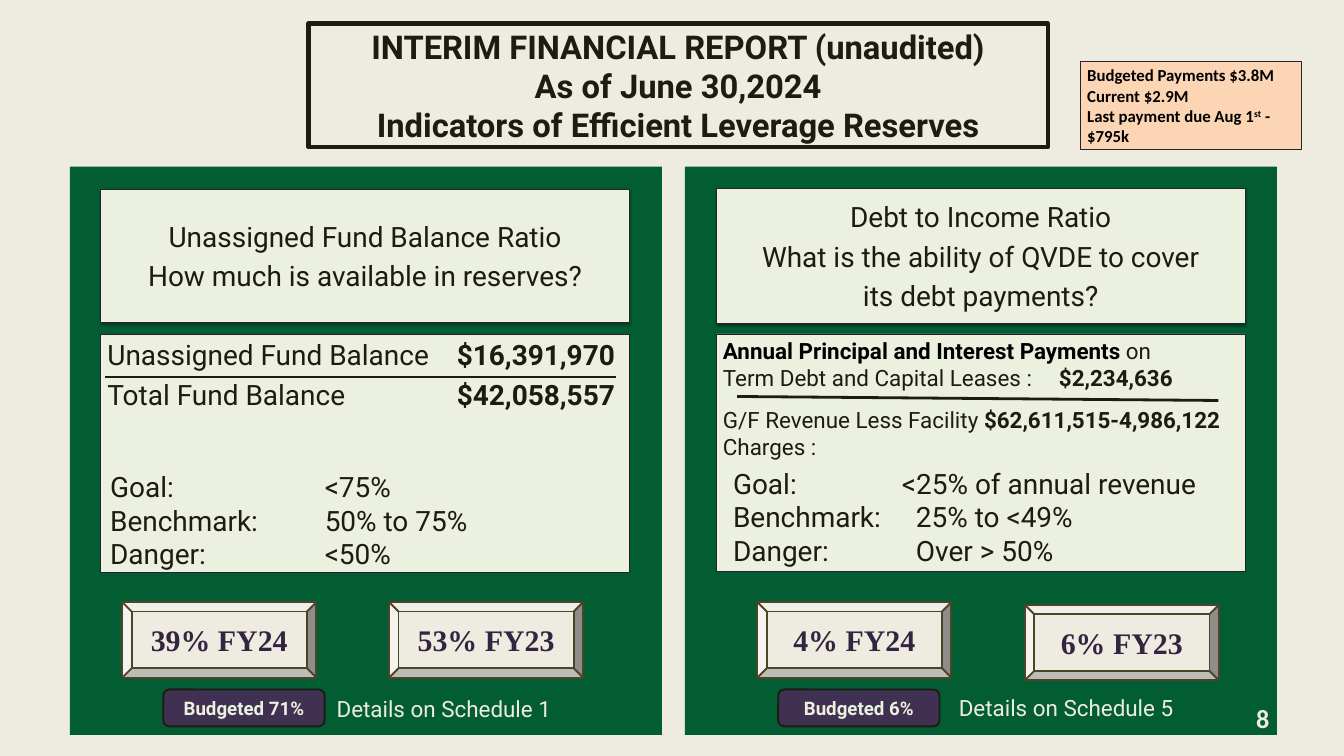
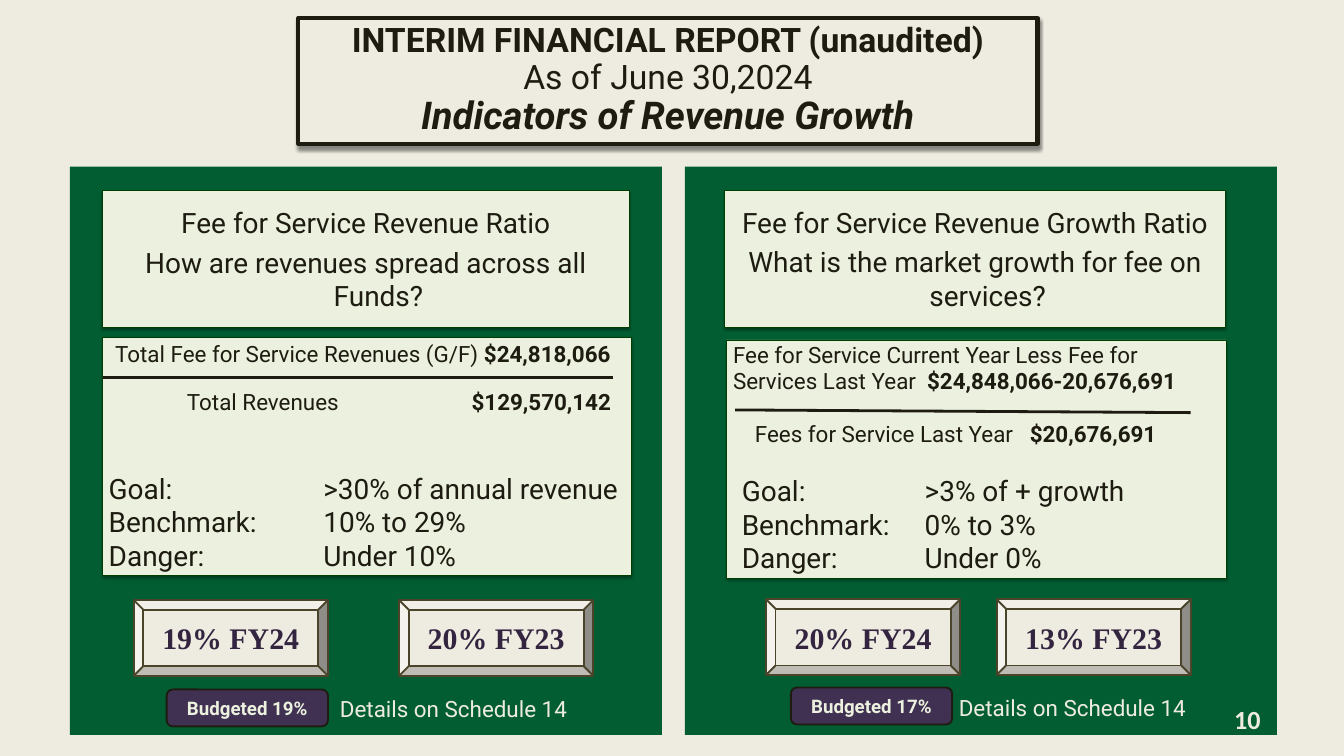
import dataclasses
import pptx
import pptx.util
import pptx.dml.color
import pptx.enum.shapes
import pptx.enum.text
import pptx.oxml.ns
from lxml import etree

Pt = pptx.util.Pt
Kind = pptx.enum.shapes.MSO_SHAPE
Align = pptx.enum.text.PP_ALIGN
Anchor = pptx.enum.text.MSO_ANCHOR


@dataclasses.dataclass(frozen=True)
class Theme:
    paper: str = "EEECE1"
    green: str = "025E32"
    mint: str = "EBF1DE"
    peach: str = "FCD5B5"
    plum: str = "403152"
    ink: str = "1E1C11"
    black: str = "000000"
    grape: str = "332440"
    edge: str = "291F35"
    moss: str = "003E00"
    brown: str = "4A452A"
    sans: str = "Roboto"
    serif: str = "Times New Roman"
    plain: str = "Calibri"
    ask: float = 30
    calc: float = 24
    card: float = 32
    tag: float = 20
    page: float = 28
    note: float = 18


T = Theme()


def bold(text, **more):
    return text, dict(bold=True, **more)


def row(*runs, tabs=(), before=0):
    return runs, tabs, before


def goals(tabs, *pairs):
    """Rows of label and value; tabs holds one stop for each row."""
    names = ("Goal:", "Benchmark:", "Danger:")
    return [row(f"{name}\t{pair}", tabs=(tab,))
            for name, pair, tab in zip(names, pairs, tabs)]


SLIDES = [
    dict(
        title=dict(
            at=(330.5, 25.2, 792, 132.5), space=1, fill=None, shade=None,
            rows=[row(bold(text, size=35.1)) for text in (
                "INTERIM FINANCIAL REPORT (unaudited)",
                "As of June 30,2024",
                "Indicators of Efficient Leverage Reserves")]),
        edge=T.edge, shade=None, page=("8", (1329.8, 752.4, 30.2, 33.8)),
        note=dict(
            at=(1157.8, 66.2, 236.9, 94.3),
            rows=[row(bold("Budgeted Payments $3.8M")),
                  row(bold("Current $2.9M")),
                  row(bold("Last payment due Aug 1"), bold("st", base=30000),
                      bold(" - $795k"))]),
        panels=[
            dict(ask=(108, 203, 566.6, 142.6),
                 lines=["Unassigned Fund Balance Ratio",
                        "How much is available in reserves?"],
                 box=(108, 358.6, 566.6, 254.9), size=30,
                 calc=[row("Unassigned Fund Balance\t", bold("$16,391,970"),
                           tabs=(-544,)),
                       row("Total Fund Balance\t", bold("$42,058,557"),
                           tabs=(-544,), before=6)],
                 rule=(113, 403.9, 659.5, 403.9),
                 goal=(110.9, 499.7, 566.6, 116.6),
                 goals=goals((230,) * 3, "<75%", "50% to 75%", "<50%"),
                 cards=[("39% FY24", 131, 645.1), ("53% FY23", 416.9, 645.1)],
                 tag=("Budgeted 71%", 175, 738.7),
                 more=("Details on Schedule 1", 353.5, 741.6)),
            dict(ask=(767.5, 202.3, 566.6, 144),
                 lines=["Debt to Income Ratio",
                        "What is the ability of QVDE to cover",
                        "its debt payments?"],
                 box=(767.5, 357.8, 566.6, 254.9), size=24,
                 calc=[row(bold("Annual Principal and Interest Payments ",
                                ink=T.black), "on"),
                       row("Term Debt and Capital Leases :\t",
                           bold("$2,234,636"), tabs=(360,)),
                       row("G/F Revenue Less Facility ",
                           bold("$62,611,515-4,986,122"), before=16.4),
                       row("Charges :")],
                 rule=(789.8, 424.8, 1305.4, 429.1),
                 goal=(778.3, 496.1, 540, 116.6),
                 goals=goals((181, 196, 196), "<25% of annual revenue",
                             "25% to <49%", "Over > 50%"),
                 cards=[("4% FY24", 811.4, 645.1), ("6% FY23", 1098, 648)],
                 tag=("Budgeted 6%", 833.8, 738.7),
                 more=("Details on Schedule 5", 1020.2, 740.2)),
        ]),
    dict(
        title=dict(
            at=(319.7, 19.4, 792, 134.6), space=0.9, fill=T.paper,
            shade=(43, 4, 4),
            rows=[row(bold("INTERIM FINANCIAL REPORT (unaudited)", size=36.1)),
                  row(("As of June 30,2024", dict(size=36.1))),
                  row(bold("Indicators of Revenue Growth", size=41,
                           italic=True))]),
        edge=T.moss, shade=(35, 3.1, 1.8),
        page=("10", (1320.5, 753.1, 30.2, 33.8)), note=None,
        panels=[
            dict(ask=(109.4, 204.5, 565.2, 146.2),
                 lines=["Fee for Service Revenue Ratio",
                        "How are revenues spread across all Funds?"],
                 box=(110.2, 361.4, 565.9, 254.9), size=24,
                 calc=[row("\tTotal Fee for Service Revenues (G/F) ",
                           bold("$24,818,066"), tabs=(6,)),
                       row("\tTotal Revenues\t", bold("$129,570,142"),
                           tabs=(83, 388), before=22)],
                 rule=(110.2, 404.6, 656.6, 404.6),
                 goal=(109.4, 501.1, 565.2, 116.6),
                 goals=goals((230,) * 3, ">30% of annual revenue",
                             "10% to 29%", "Under 10%"),
                 cards=[("19% FY24", 143.3, 643), ("20% FY23", 427.7, 643)],
                 tag=("Budgeted 19%", 178.6, 738.7),
                 more=("Details on Schedule 14", 357.1, 741.6)),
            dict(ask=(776.2, 203.8, 537.1, 146.9),
                 lines=["Fee for Service Revenue Growth Ratio",
                        "What is the market growth for fee on services?"],
                 box=(778.3, 364.3, 535.7, 254.9), size=24,
                 over=(778.3, 361.4, 535.7, 123.8),
                 calc=[row("Fee for Service Current Year Less Fee for "
                           "Services Last Year\t",
                           bold("$24,848,066-20,676,691"), tabs=(208,)),
                       row("\tFees for Service Last Year\t",
                           bold("$20,676,691"), tabs=(23.5, 318), before=28)],
                 rule=(787.7, 439.2, 1275.8, 442.1),
                 goal=(787.7, 504, 508.3, 116.6),
                 goals=goals((196,) * 3, ">3% of + growth", "0% to 3%",
                             "Under 0%"),
                 cards=[("20% FY24", 820.8, 642.2),
                        ("13% FY23", 1067.8, 642.2)],
                 tag=("Budgeted 17%", 847.4, 736.6),
                 more=("Details on Schedule 14", 1020.2, 740.2)),
        ]),
]


def rgb(code):
    return pptx.dml.color.RGBColor.from_string(code)


def node(parent, tag, **attrs):
    child = etree.SubElement(parent, pptx.oxml.ns.qn(tag))
    for key, value in attrs.items():
        child.set(key, str(value))
    return child


def cast(shape, shade):
    """Add a downward shadow: opacity in percent, blur and distance."""
    alpha, blur, dist = shade
    shape.shadow.inherit = False
    props = shape._element.spPr.find(pptx.oxml.ns.qn("a:effectLst"))
    outer = node(props, "a:outerShdw", blurRad=int(Pt(blur)),
                 dist=int(Pt(dist)), dir=90 * 60000, rotWithShape=0)
    node(node(outer, "a:srgbClr", val=T.black), "a:alpha", val=alpha * 1000)


def paint(shape, fill, edge=None, width=0.75, shade=None):
    if fill:
        shape.fill.solid()
        shape.fill.fore_color.rgb = rgb(fill)
    else:
        shape.fill.background()
    if edge:
        shape.line.color.rgb = rgb(edge)
        shape.line.width = Pt(width)
    else:
        shape.line.fill.background()
    if shade:
        cast(shape, shade)
    else:
        shape.shadow.inherit = False


def place(shape, at):
    shape.left, shape.top, shape.width, shape.height = map(Pt, at)


def write(shape, rows, size, ink=T.ink, font=T.sans, align=Align.LEFT,
          anchor=Anchor.TOP, inset=None, space=None, hang=0):
    frame = shape.text_frame
    frame.word_wrap = True
    frame.auto_size = pptx.enum.text.MSO_AUTO_SIZE.NONE
    frame.vertical_anchor = anchor
    if inset is not None:
        frame.margin_left = frame.margin_right = Pt(inset)
        frame.margin_top = frame.margin_bottom = Pt(inset)
    for i, (runs, tabs, before) in enumerate(rows):
        para = frame.add_paragraph() if i else frame.paragraphs[0]
        para.alignment = align
        if space:
            para.line_spacing = space
        para.space_before = Pt(before)
        props = para._p.get_or_add_pPr()
        if hang:
            props.set("marL", str(int(Pt(hang))))
            props.set("indent", str(-int(Pt(hang))))
        if tabs:
            stops = node(props, "a:tabLst")
            for tab in tabs:  # a negative stop is right-aligned
                node(stops, "a:tab", pos=int(Pt(abs(tab))),
                     algn="r" if tab < 0 else "l")
        for part in runs:
            text, look = (part, {}) if isinstance(part, str) else part
            run = para.add_run()
            run.text = text
            run.font.name = font
            run.font.size = Pt(look.get("size", size))
            run.font.bold = look.get("bold", False)
            run.font.italic = look.get("italic", False)
            run.font.color.rgb = rgb(look.get("ink", ink))
            if "base" in look:
                run._r.get_or_add_rPr().set("baseline", str(look["base"]))


def block(slide, kind, at, *look, **more):
    shape = slide.shapes.add_shape(kind, *map(Pt, at))
    paint(shape, *look, **more)
    return shape


def label(slide, at, rows, size, **more):
    write(slide.shapes.add_textbox(*map(Pt, at)), rows, size, **more)


def stroke(slide, ends):
    line = slide.shapes.add_connector(
        pptx.enum.shapes.MSO_CONNECTOR.STRAIGHT, *map(Pt, ends))
    line.line.color.rgb = rgb(T.ink)
    line.line.width = Pt(3)
    node(line._element.spPr, "a:effectLst")


def panel(slide, data, i, edge, shade):
    mid = dict(align=Align.CENTER, anchor=Anchor.MIDDLE)
    block(slide, Kind.RECTANGLE, (74.9 + i * 658.8, 178.6, 634.3, 608.8),
          T.green)
    ask = block(slide, Kind.RECTANGLE, data["ask"], T.mint, edge,
                shade=(35, 3.1, 1.8))
    write(ask, [row(text, before=6) for text in data["lines"]], T.ask,
          hang=27, **mid)
    box = block(slide, Kind.RECTANGLE, data["box"], T.mint, edge, shade=shade)
    if "over" in data:
        label(slide, data["over"], data["calc"], data["size"])
    else:
        write(box, data["calc"], data["size"])
    stroke(slide, data["rule"])
    label(slide, data["goal"], data["goals"], T.ask)
    for text, x, y in data["cards"]:
        card = block(slide, Kind.BEVEL, (x, y, 208, 81), T.paper, T.brown, 2)
        write(card, [row(bold(text))], T.card, T.grape, T.serif, **mid)
    text, x, y = data["tag"]
    tag = block(slide, Kind.ROUNDED_RECTANGLE, (x, y, 172.8, 39.6),
                T.plum, T.ink, 2)
    write(tag, [row(bold(text))], T.tag, T.mint, **mid)
    text, x, y = data["more"]
    label(slide, (x, y, 275, 36), [row(text)], T.calc, ink=T.paper)


def build(deck, data):
    slide = deck.slides.add_slide(deck.slide_layouts[5])
    head, title = data["title"], slide.shapes.title
    place(title, head["at"])
    paint(title, head["fill"], T.ink, 4.5, head["shade"])
    write(title, head["rows"], 36, align=Align.CENTER, anchor=Anchor.MIDDLE,
          inset=0, space=head["space"])
    for i, part in enumerate(data["panels"]):
        panel(slide, part, i, data["edge"], data["shade"])
    text, at = data["page"]
    label(slide, at, [row(bold(text))], T.page, ink=T.paper, font=T.plain,
          align=Align.RIGHT, inset=0)
    note = data["note"]
    if note:
        shape = block(slide, Kind.RECTANGLE, note["at"], T.peach, T.edge)
        write(shape, note["rows"], T.note, T.black, T.plain)


def main():
    deck = pptx.Presentation()
    deck.slide_width, deck.slide_height = Pt(1440), Pt(810)
    back = deck.slide_master.background.fill
    back.solid()
    back.fore_color.rgb = rgb(T.paper)
    for data in SLIDES:
        build(deck, data)
    deck.save("out.pptx")


if __name__ == "__main__":
    main()
